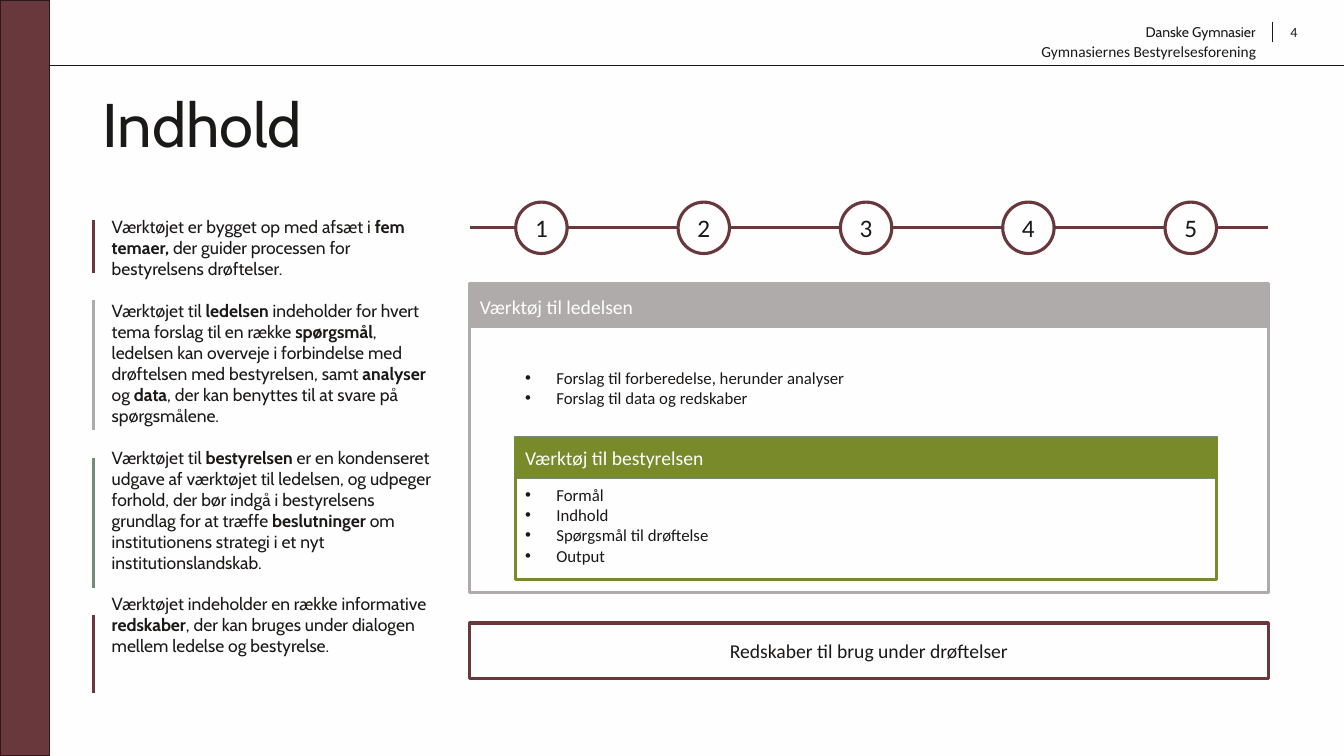
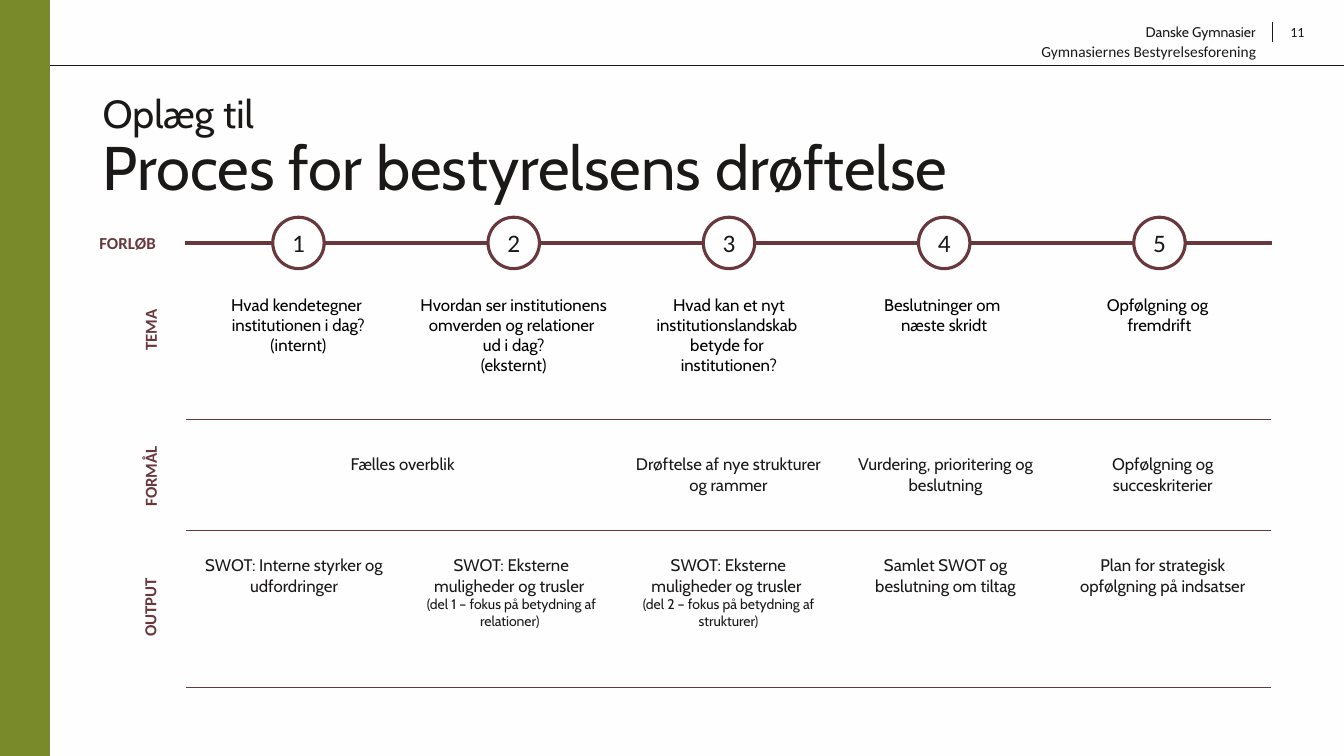
from pptx import Presentation
from pptx.dml.color import RGBColor
from pptx.enum.shapes import MSO_CONNECTOR, MSO_SHAPE
from pptx.enum.text import MSO_ANCHOR, PP_ALIGN
from pptx.oxml.ns import qn
from pptx.util import Inches, Pt
from lxml import etree

PAPER = RGBColor(0xFF, 0xFE, 0xFE)
INK = RGBColor(0x1A, 0x19, 0x18)
BLACK = RGBColor(0x00, 0x00, 0x00)
MAROON = RGBColor(0x68, 0x38, 0x3C)
DARK_MAROON = RGBColor(0x2E, 0x19, 0x1A)
OLIVE = RGBColor(0x78, 0x8A, 0x2A)
SAGE = RGBColor(0x6E, 0x8D, 0x7B)
GREY = RGBColor(0xAF, 0xAB, 0xAB)
CABIN, CALIBRI = "Cabin", "Calibri"
LEFT, CENTER, RIGHT = PP_ALIGN.LEFT, PP_ALIGN.CENTER, PP_ALIGN.RIGHT
TOP, MIDDLE = MSO_ANCHOR.TOP, MSO_ANCHOR.MIDDLE
RECTANGLE, OVAL = MSO_SHAPE.RECTANGLE, MSO_SHAPE.OVAL
STRAIGHT = MSO_CONNECTOR.STRAIGHT
CIRCLE = 0.51

INTRO = [
    "Værktøjet er bygget op med afsæt i *fem temaer, *der guider processen for "
    "bestyrelsens drøftelser.",
    "Værktøjet til *ledelsen* indeholder for hvert tema forslag til en række "
    "*spørgsmål*, ledelsen kan overveje i forbindelse med drøftelsen med "
    "bestyrelsen, samt *analyser* og *data*, der kan benyttes til at svare på "
    "spørgsmålene.",
    "Værktøjet til *bestyrelsen* er en kondenseret udgave af værktøjet til "
    "ledelsen, og udpeger forhold, der bør indgå i bestyrelsens grundlag for at "
    "træffe *beslutninger* om institutionens strategi i et nyt "
    "institutionslandskab.",
    "Værktøjet indeholder en række informative *redskaber*, der kan bruges under "
    "dialogen mellem ledelse og bestyrelse.",
]
INTRO_MARKS = [(2.18, 2.71, MAROON), (2.98, 4.27, GREY),
               (4.54, 5.83, SAGE), (6.1, 6.88, MAROON)]
THEMES = [
    ["Hvad kendetegner ", "institutionen i dag?", "(internt)"],
    ["Hvordan ser institutionens omverden og relationer ", "ud i dag?",
     "(eksternt)"],
    ["Hvad kan et nyt institutionslandskab ", "betyde for ", "institutionen?"],
    ["Beslutninger om ", "næste skridt"],
    ["Opfølgning og ", "fremdrift"],
]
PURPOSES = [
    ["Fælles overblik"],
    [],
    ["Drøftelse af nye strukturer og rammer"],
    ["Vurdering, prioritering og beslutning"],
    ["Opfølgning og succeskriterier"],
]
OUTPUTS = [
    ["SWOT: Interne styrker og udfordringer"],
    ["SWOT: Eksterne muligheder og trusler ",
     ("(del 1 – fokus på betydning af relationer) ", 10)],
    ["SWOT: Eksterne muligheder og trusler ",
     ("(del 2 – fokus på betydning af strukturer)", 10)],
    ["Samlet SWOT og beslutning om tiltag"],
    ["Plan for strategisk opfølgning på indsatser"],
]
ROW_LABELS = [("TEMA", 1.05, 3.04, 1.05), ("FORMÅL", 1.05, 4.49, 1.05),
              ("OUTPUT", 0.91, 5.79, 1.32)]


def write(frame, lines, size=12, font=CALIBRI, color=INK, bold=False, align=LEFT,
          gap=0, leading=None, bullet=False):
    for index, line in enumerate(lines):
        text, points = line if isinstance(line, tuple) else (line, size)
        para = frame.paragraphs[0] if index == 0 else frame.add_paragraph()
        if bullet:
            props = para._p.get_or_add_pPr()
            props.set("marL", str(Inches(0.31)))
            props.set("indent", str(-Inches(0.31)))
            etree.SubElement(props, qn("a:buFont")).set("typeface", "Arial")
            etree.SubElement(props, qn("a:buChar")).set("char", "•")
        para.alignment = align
        if leading:
            para.line_spacing = leading
        if gap and index:
            para.space_before = Pt(gap)
        for part, piece in enumerate(text.split("*")):
            if piece:
                span = para.add_run()
                span.text = piece
                span.font.size = Pt(points)
                span.font.name = font
                span.font.color.rgb = color
                span.font.bold = bold or part % 2 == 1


def set_border(cell, side, color=None, width=1):
    props = cell._tc.get_or_add_tcPr()
    line = etree.Element(qn("a:" + side), w=str(Pt(width)))
    if color is None:
        etree.SubElement(line, qn("a:noFill"))
    else:
        fill = etree.SubElement(line, qn("a:solidFill"))
        etree.SubElement(fill, qn("a:srgbClr")).set("val", str(color))
    position = sum(child.tag.startswith(qn("a:ln")) for child in props)
    props.insert(position, line)


class Deck:
    def __init__(self):
        self.deck = Presentation()
        self.deck.slide_width = Inches(13.33)
        self.deck.slide_height = Inches(7.5)
        self.page = None

    def start_page(self, number, title, band, band_edge):
        self.page = self.deck.slides.add_slide(self.deck.slide_layouts[6])
        self.page.background.fill.solid()
        self.page.background.fill.fore_color.rgb = PAPER
        self.line(0, 0.65, 13.33, 0.65, INK, 0.5)
        self.text(11.05, 0.18, 1.5, 0.27, ["Danske Gymnasier"], size=10,
                  font=CABIN, align=RIGHT)
        self.line(12.62, 0.22, 12.62, 0.42, INK, 0.75)
        self.text(12.7, 0.18, 0.49, 0.4, [number], size=10)
        self.text(10.23, 0.37, 2.47, 0.29,
                  ["Gymnasiernes Bestyrelsesforening"], size=11)
        self.text(0.92, 0.89, 11.5, 1.45, title, size=44, font=CABIN, leading=0.9)
        self.shape(0, 0, 0.49, 7.5, fill=band, edge=band_edge)

    def text(self, left, top, width, height, lines, anchor=TOP, rotation=0,
             **style):
        box = self.page.shapes.add_textbox(Inches(left), Inches(top),
                                           Inches(width), Inches(height))
        box.rotation = rotation
        box.text_frame.word_wrap = True
        box.text_frame.vertical_anchor = anchor
        write(box.text_frame, lines, **style)

    def shape(self, left, top, width, height, lines=(), kind=RECTANGLE, fill=None,
              edge=MAROON, weight=1, anchor=MIDDLE, inset=0.05, **style):
        shape = self.page.shapes.add_shape(kind, Inches(left), Inches(top),
                                           Inches(width), Inches(height))
        shape.shadow.inherit = False
        if fill is None:
            shape.fill.background()
        else:
            shape.fill.solid()
            shape.fill.fore_color.rgb = fill
        shape.line.color.rgb = edge
        shape.line.width = Pt(weight)
        frame = shape.text_frame
        frame.word_wrap = True
        frame.vertical_anchor = anchor
        frame.margin_top = Inches(inset)
        write(frame, lines, **style)

    def line(self, x1, y1, x2, y2, color=MAROON, weight=2.25):
        line = self.page.shapes.add_connector(STRAIGHT, Inches(x1), Inches(y1),
                                              Inches(x2), Inches(y2))
        line.line.color.rgb = color
        line.line.width = Pt(weight)
        etree.SubElement(line._element.spPr, qn("a:effectLst"))

    def timeline(self, left, right, middle, centers, weight):
        self.line(left, middle, right, middle, weight=weight)
        for number, center in enumerate(centers, 1):
            self.shape(center - CIRCLE / 2, middle - CIRCLE / 2, CIRCLE, CIRCLE,
                       [str(number)], kind=OVAL, fill=PAPER, weight=2.25, size=18,
                       align=CENTER)

    def table(self, left, top, width, heights, rows):
        table = self.page.shapes.add_table(
            len(rows), len(rows[0]), Inches(left), Inches(top), Inches(width),
            Inches(sum(heights))).table
        table.first_row = table.horz_banding = False
        for r, (height, row) in enumerate(zip(heights, rows)):
            table.rows[r].height = Inches(height)
            for c, lines in enumerate(row):
                cell = table.cell(r, c)
                cell.fill.background()
                set_border(cell, "lnL")
                set_border(cell, "lnR")
                set_border(cell, "lnT", MAROON if r else None)
                set_border(cell, "lnB", MAROON)
                write(cell.text_frame, lines, font=CABIN, align=CENTER)
        return table


def build_contents(deck):
    deck.start_page("4", ["Indhold"], MAROON, DARK_MAROON)
    deck.text(1.01, 2.09, 3.41, 4.56, INTRO, size=12.5, font=CABIN, gap=15)
    for top, bottom, color in INTRO_MARKS:
        deck.line(0.93, top, 0.93, bottom, color)
    deck.timeline(4.66, 12.58, 2.26, [5.37 + 1.61 * i for i in range(5)], 2.25)
    deck.shape(4.66, 2.81, 7.92, 3.07, edge=GREY, weight=2.25)
    deck.shape(4.66, 2.83, 7.92, 0.42, ["Værktøj til ledelsen"], fill=GREY,
               edge=GREY, size=14, color=PAPER)
    deck.text(5.11, 3.47, 4.23, 0.76,
              ["Forslag til forberedelse, herunder analyser",
               "Forslag til data og redskaber"], anchor=MIDDLE, bullet=True)
    deck.shape(5.11, 4.33, 6.96, 0.42, ["Værktøj til bestyrelsen"], fill=OLIVE,
               edge=SAGE, size=14, color=PAPER)
    deck.shape(5.11, 4.35, 6.96, 1.4,
               ["Formål", "Indhold", "Spørgsmål til drøftelse", "Output"],
               edge=OLIVE, weight=2.25, anchor=TOP, inset=0.46, bullet=True)
    deck.shape(4.66, 6.18, 7.92, 0.55, ["Redskaber til brug under drøftelser"],
               weight=2.25, size=14, align=CENTER)


def build_process(deck):
    deck.start_page("11", [("Oplæg til ", 28), "Proces for bestyrelsens drøftelse"],
                    OLIVE, OLIVE)
    centers = [2.96 + 2.135 * i for i in range(5)]
    deck.timeline(1.84, 12.62, 2.41, centers, 3)
    label = {"color": MAROON, "bold": True, "align": CENTER}
    deck.text(0.72, 2.17, 1.09, 0.47, ["FORLØB"], anchor=MIDDLE, **label)
    for name, left, top, width in ROW_LABELS:
        deck.text(left, top, width, 0.47, [name], rotation=270, **label)
    table = deck.table(1.84, 2.75, 10.77, [1.41, 1.1, 1.56],
                       [[[]] * 5, PURPOSES, OUTPUTS])
    table.cell(1, 0).merge(table.cell(1, 1))
    for column in range(5):
        table.cell(1, column).vertical_anchor = MIDDLE
        table.cell(2, column).margin_top = Inches(0.25)
    table.cell(1, 0).margin_bottom = Inches(0.26)
    for center, lines in zip(centers, THEMES):
        deck.text(center - 1.17, 2.87, 2.34, 0.91, lines, font=CABIN, color=BLACK,
                  align=CENTER)


def main():
    deck = Deck()
    build_contents(deck)
    build_process(deck)
    deck.deck.save("out.pptx")


if __name__ == "__main__":
    main()
